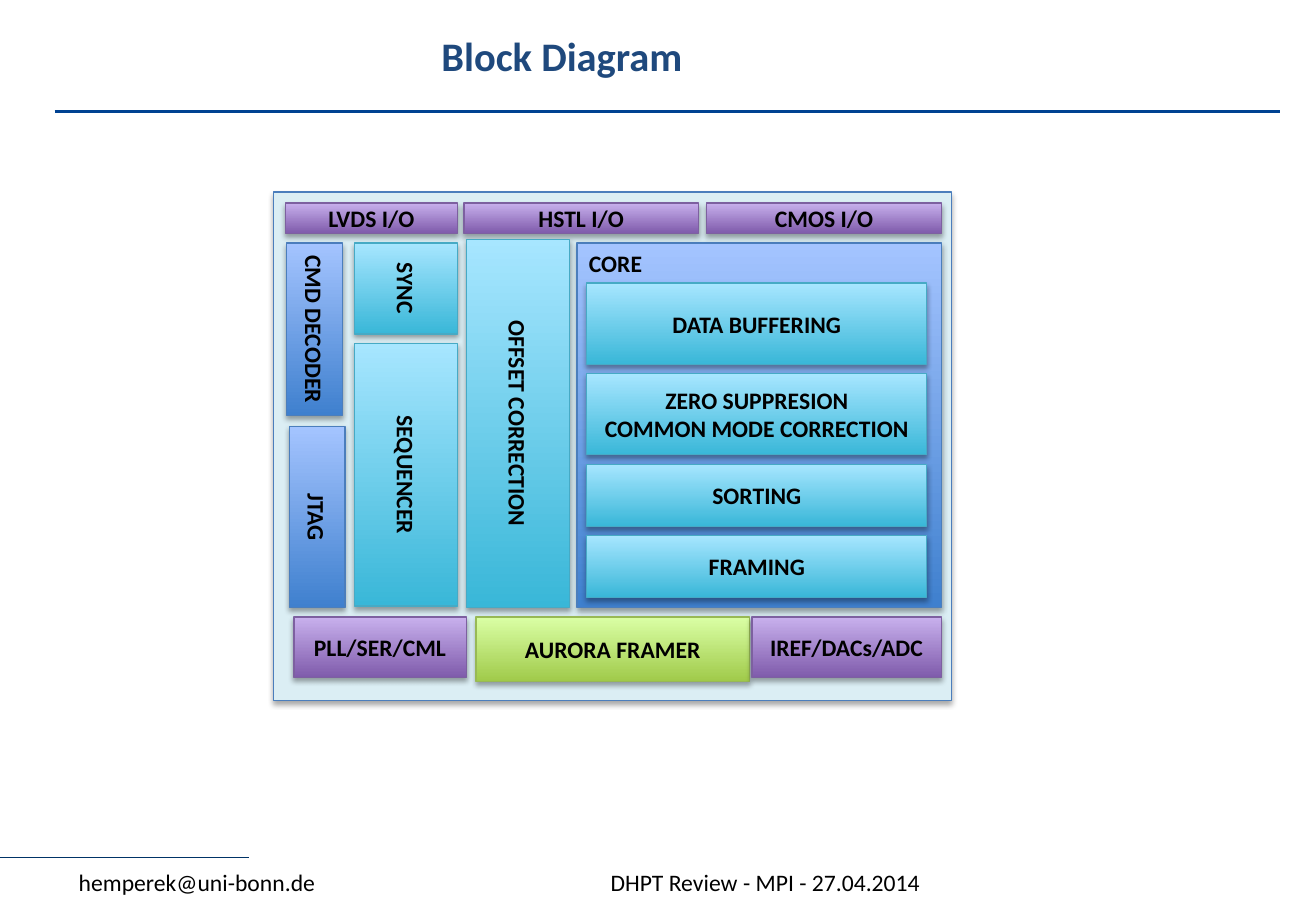
from lxml import etree
from pptx import Presentation
from pptx.dml.color import RGBColor as RGB
from pptx.enum.shapes import MSO_CONNECTOR as CXN, MSO_SHAPE as SHAPE
from pptx.enum.text import MSO_ANCHOR as ANCHOR, PP_ALIGN as ALIGN
from pptx.oxml import parse_xml
from pptx.oxml.ns import nsdecls, qn
from pptx.util import Pt

BLACK = RGB(0x00, 0x00, 0x00)
TITLE_BLUE = RGB(0x1F, 0x49, 0x7D)
RULE_BLUE = RGB(0x00, 0x42, 0x92)
FOOT_BLUE = RGB(0x00, 0x33, 0x66)
DIE_FILL = RGB(0xDB, 0xEE, 0xF4)
DIE_LINE = RGB(0x4B, 0x7E, 0xBC)

BLUE = RGB(0x3F, 0x80, 0xCE), RGB(0xA4, 0xC4, 0xFF), DIE_LINE
GREEN = RGB(0xA0, 0xCA, 0x4A), RGB(0xDA, 0xFF, 0xA5), RGB(0x98, 0xB9, 0x55)
PURPLE = RGB(0x7F, 0x5B, 0xAB), RGB(0xC8, 0xB0, 0xED), RGB(0x7D, 0x60, 0xA0)
CYAN = RGB(0x39, 0xB7, 0xD8), RGB(0xA7, 0xE6, 0xFF), RGB(0x46, 0xAA, 0xC5)

SHADOW = (f'<a:outerShdw {nsdecls("a")} blurRad="40000" dist="23000" dir="5400000" '
          'rotWithShape="0"><a:srgbClr val="000000"><a:alpha val="35000"/>'
          '</a:srgbClr></a:outerShdw>')

LABEL = {"name": "Calibri", "size": Pt(14), "bold": True}
FOOTER = {**LABEL, "bold": False}
HEADING = {**LABEL, "size": Pt(24)}


def write(sp, text, fmt, color=BLACK, align=ALIGN.CENTER, anchor=ANCHOR.MIDDLE):
    """Fill a shape with text, one paragraph per line."""
    tf = sp.text_frame
    tf.word_wrap = True
    tf.vertical_anchor = anchor
    tf.text = text
    for p in tf.paragraphs:
        p.alignment = align
        for name, value in fmt.items():
            setattr(p.font, name, value)
        p.font.color.rgb = color


def add_text(s, box, text, fmt, **style):
    """Add a text box."""
    write(s.shapes.add_textbox(*map(Pt, box)), text, fmt, **style)


def add_rule(s, x1, x2, y, color, width):
    """Add a plain horizontal line."""
    cxn = s.shapes.add_connector(CXN.STRAIGHT, Pt(x1), Pt(y), Pt(x2), Pt(y))
    cxn.line.color.rgb = color
    cxn.line.width = Pt(width)
    etree.SubElement(cxn.element.spPr, qn("a:effectLst"))


def add_rect(s, box, line):
    """Add a thin-lined rectangle with a soft shadow below it."""
    sp = s.shapes.add_shape(SHAPE.RECTANGLE, *map(Pt, box))
    sp.line.color.rgb = line
    sp.line.width = Pt(0.75)
    sp.shadow.inherit = False
    sp.element.spPr.find(qn("a:effectLst")).append(parse_xml(SHADOW))
    return sp


def add_block(s, box, text, palette, vertical=False, **style):
    """Add a labelled block that lightens towards its top."""
    dark, light, line = palette
    sp = add_rect(s, box, line)
    sp.fill.gradient()
    sp.fill.gradient_angle = 90
    for stop, color in zip(sp.fill.gradient_stops, (dark, light)):
        stop.color.rgb = color
    write(sp, text, LABEL, **style)
    if vertical:
        sp.element.txBody.bodyPr.set("vert", "vert")


def add_core(s, box):
    """Add the core with its stack of processing stages."""
    add_block(s, box, "CORE", BLUE, align=ALIGN.LEFT, anchor=ANCHOR.TOP)
    x, y, gap = box[0] + 5.8, box[1] + 23.8, 5.5
    for text, h in (("DATA BUFFERING", 48.2),
                    ("ZERO SUPPRESION\nCOMMON MODE CORRECTION", 48.2),
                    ("SORTING", 36.7), ("FRAMING", 36.7)):
        add_block(s, (x, y, 201.6, h), text, CYAN)
        y += h + gap


def add_die(s, box):
    """Add the chip outline with its I/O, control and data blocks."""
    sp = add_rect(s, box, DIE_LINE)
    sp.fill.solid()
    sp.fill.fore_color.rgb = DIE_FILL
    left, top = box[:2]
    add_core(s, (left + 180, top + 30.2, 216, 216))

    for x, y, w, h, text, palette in (
            (7.2, 6.5, 102, 18, "LVDS I/O", PURPLE),
            (113, 6.5, 139, 18, "HSTL I/O", PURPLE),
            (257, 6.5, 139, 18, "CMOS I/O", PURPLE),
            (120.2, 252, 162, 38.2, "AURORA FRAMER", GREEN),
            (12.2, 252, 102.2, 36, "PLL/SER/CML", PURPLE),
            (283.7, 252, 112.3, 36, "IREF/DACs/ADC", PURPLE)):
        add_block(s, (left + x, top + y, w, h), text, palette)

    for x, y, w, h, text, palette in (
            (7.9, 30.2, 33.1, 102.2, "CMD DECODER", BLUE),
            (9.4, 139, 33.1, 107.3, "JTAG", BLUE),
            (48.2, 30.2, 61.2, 54, "SYNC", CYAN),
            (48.2, 90, 61.2, 155.5, "SEQUENCER", CYAN),
            (114.5, 28.1, 61.2, 218.2, "OFFSET CORRECTION", CYAN)):
        add_block(s, (left + x, top + y, w, h), text, palette, vertical=True)


def add_header(s, box):
    """Add the title with the rule under it."""
    x, y, w, h = box
    add_rule(s, x, x + w, y + h, RULE_BLUE, 1.5)
    add_text(s, (x + 5.8, y, 589.7, 45.4), "Block Diagram", HEADING,
             color=TITLE_BLUE, anchor=ANCHOR.TOP)


def add_footer(s, box):
    """Add the footer rule, address and event."""
    x, y, w, h = box
    add_rule(s, x, x + 147.6, y, FOOT_BLUE, 0.75)
    add_text(s, (x + 39.6, y, 220.3, h), "hemperek@uni-bonn.de", FOOTER,
             align=ALIGN.LEFT)
    add_text(s, (x + 267.1, y, 373, h), "DHPT Review - MPI - 27.04.2014", FOOTER)


def main():
    """Build and save the slide."""
    prs = Presentation()
    prs.slide_width, prs.slide_height = Pt(780), Pt(540)
    s = prs.slides.add_slide(prs.slide_layouts[6])
    add_header(s, (32.4, 15.1, 726.5, 51.1))
    add_footer(s, (0, 508.3, 780, 28.8))
    add_die(s, (162, 113.8, 401.8, 301.5))
    prs.save("out.pptx")


if __name__ == "__main__":
    main()
